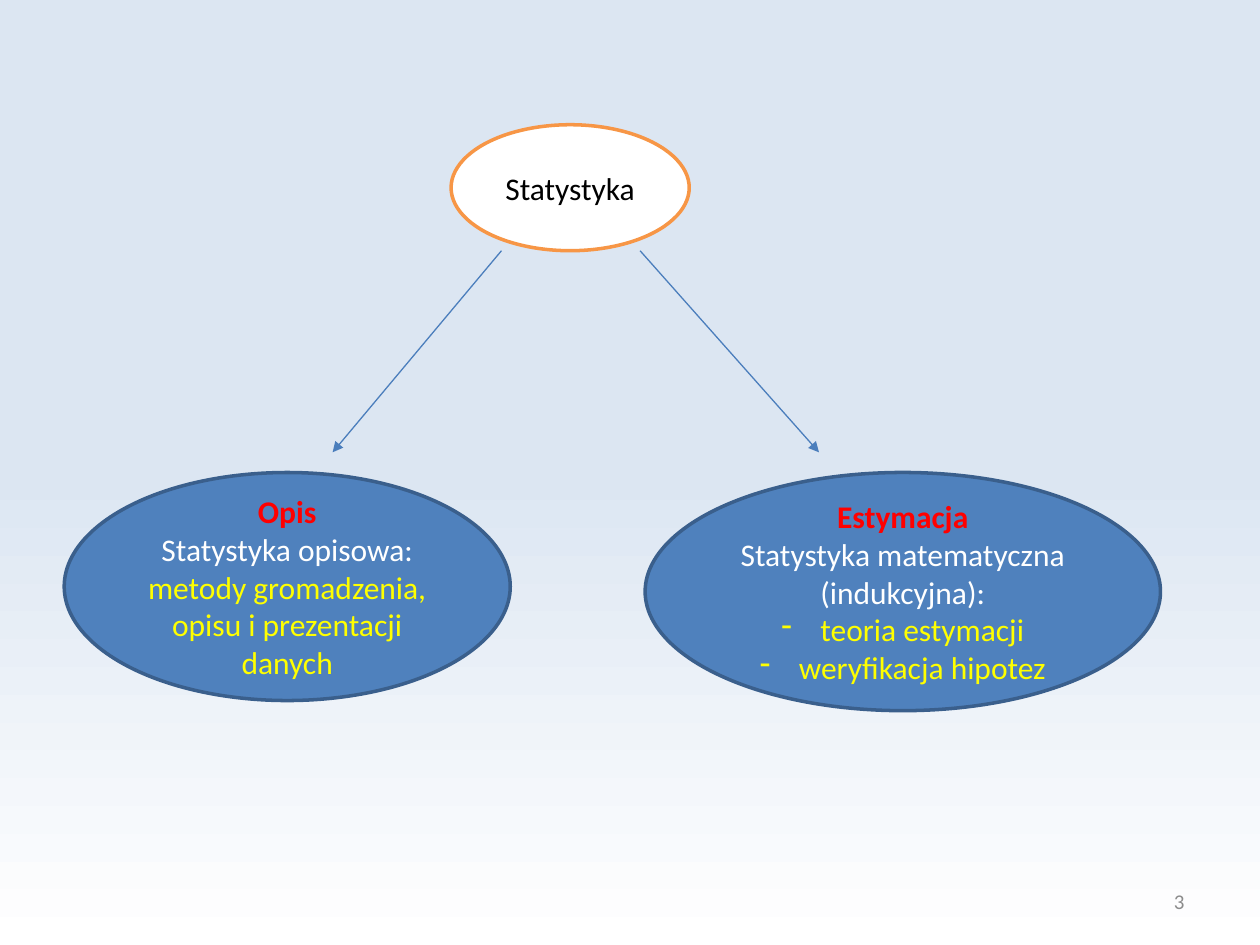
from copy import deepcopy

from lxml import etree
from pptx import Presentation
from pptx import util as u
from pptx.dml.color import RGBColor
from pptx.enum import shapes, text
from pptx.oxml.ns import qn

PALE = RGBColor(0xDC, 0xE6, 0xF2)
WHITE = RGBColor(0xFF, 0xFF, 0xFF)
BLACK = RGBColor(0x00, 0x00, 0x00)
GREY = RGBColor(0x8C, 0x8C, 0x8C)
ORANGE = RGBColor(0xF7, 0x96, 0x46)
BLUE = RGBColor(0x4F, 0x81, 0xBD)
NAVY = RGBColor(0x3A, 0x5F, 0x8C)
STEEL = RGBColor(0x4B, 0x7E, 0xBC)
RED = RGBColor(0xFF, 0x00, 0x00)
YELLOW = RGBColor(0xFF, 0xFF, 0x00)
FONT = "Calibri"
COLUMNS, ROWS = 100, 75


def write(paragraph, words, color=WHITE, size=18, bold=False,
          align=text.PP_ALIGN.CENTER, bullet=None):
    paragraph.alignment = align
    run = paragraph.add_run()
    run.text = words
    run.font.name = FONT
    run.font.size = u.Pt(size)
    run.font.bold = bold
    run.font.color.rgb = color
    if bullet:
        properties = paragraph._p.get_or_add_pPr()
        indent = u.Inches(0.31)
        properties.set("marL", str(indent))
        properties.set("indent", str(-indent))
        etree.SubElement(properties, qn("a:buChar")).set("char", bullet)


class Diagram:
    def __init__(self, deck):
        self.column = deck.slide_width / COLUMNS
        self.row = deck.slide_height / ROWS
        self.slide = deck.slides.add_slide(deck.slide_layouts[6])

    def place(self, *spans):
        return [round(span * (self.row if i % 2 else self.column))
                for i, span in enumerate(spans)]

    def background(self, *colors):
        fill = self.slide.background.fill
        fill.gradient()
        fill.gradient_angle = 270
        stops = self.slide.element.find(".//" + qn("a:gsLst"))
        while len(stops) < len(colors):
            stops.append(deepcopy(stops[-1]))
        for i, (stop, color) in enumerate(zip(fill.gradient_stops, colors)):
            stop.color.rgb = color
            stop.position = i / (len(colors) - 1)

    def fill_text(self, frame, lines):
        frame.word_wrap = True
        frame.vertical_anchor = text.MSO_ANCHOR.MIDDLE
        for i, (words, style) in enumerate(lines):
            paragraph = frame.add_paragraph() if i else frame.paragraphs[0]
            write(paragraph, words, **style)

    def ellipse(self, area, lines, fill=BLUE, outline=NAVY):
        oval = self.slide.shapes.add_shape(
            shapes.MSO_SHAPE.OVAL, *self.place(*area))
        oval.shadow.inherit = False
        oval.fill.solid()
        oval.fill.fore_color.rgb = fill
        oval.line.color.rgb = outline
        oval.line.width = u.Pt(2)
        self.fill_text(oval.text_frame, lines)

    def label(self, area, words, **style):
        box = self.slide.shapes.add_textbox(*self.place(*area))
        self.fill_text(box.text_frame, [(words, style)])

    def arrow(self, start, end):
        link = self.slide.shapes.add_connector(
            shapes.MSO_CONNECTOR.STRAIGHT, *self.place(*start, *end))
        link.line.color.rgb = STEEL
        link.line.width = u.Pt(0.75)
        outline = link.line._get_or_add_ln()
        etree.SubElement(outline, qn("a:tailEnd")).set("type", "triangle")
        etree.SubElement(link._element.spPr, qn("a:effectLst"))


def main():
    deck = Presentation()
    deck.slide_width, deck.slide_height = u.Inches(10), u.Inches(7.5)
    diagram = Diagram(deck)
    diagram.background(PALE, PALE, WHITE)
    diagram.label((71.7, 69.5, 23.3, 4), "3", color=GREY, size=12,
                  align=text.PP_ALIGN.RIGHT)

    heading = dict(color=RED, bold=True)
    detail = dict(color=YELLOW)
    point = dict(color=YELLOW, bullet="-")
    diagram.ellipse((35.8, 9.9, 18.9, 10),
                    [("Statystyka", dict(color=BLACK))], WHITE, ORANGE)
    diagram.ellipse((5.1, 37.5, 35.4, 18.1), [
        ("Opis", heading),
        ("Statystyka opisowa:", {}),
        ("metody gromadzenia, opisu i prezentacji danych", detail),
    ])
    diagram.ellipse((51.2, 37.5, 40.9, 18.9), [
        ("Estymacja", heading),
        ("Statystyka matematyczna (indukcyjna):", {}),
        ("teoria estymacji", point),
        ("weryfikacja hipotez", point),
    ])
    for start, end in ((39.8, 26.4), (50.8, 65)):
        diagram.arrow((start, 19.9), (end, 35.9))
    deck.save("out.pptx")


if __name__ == "__main__":
    main()
